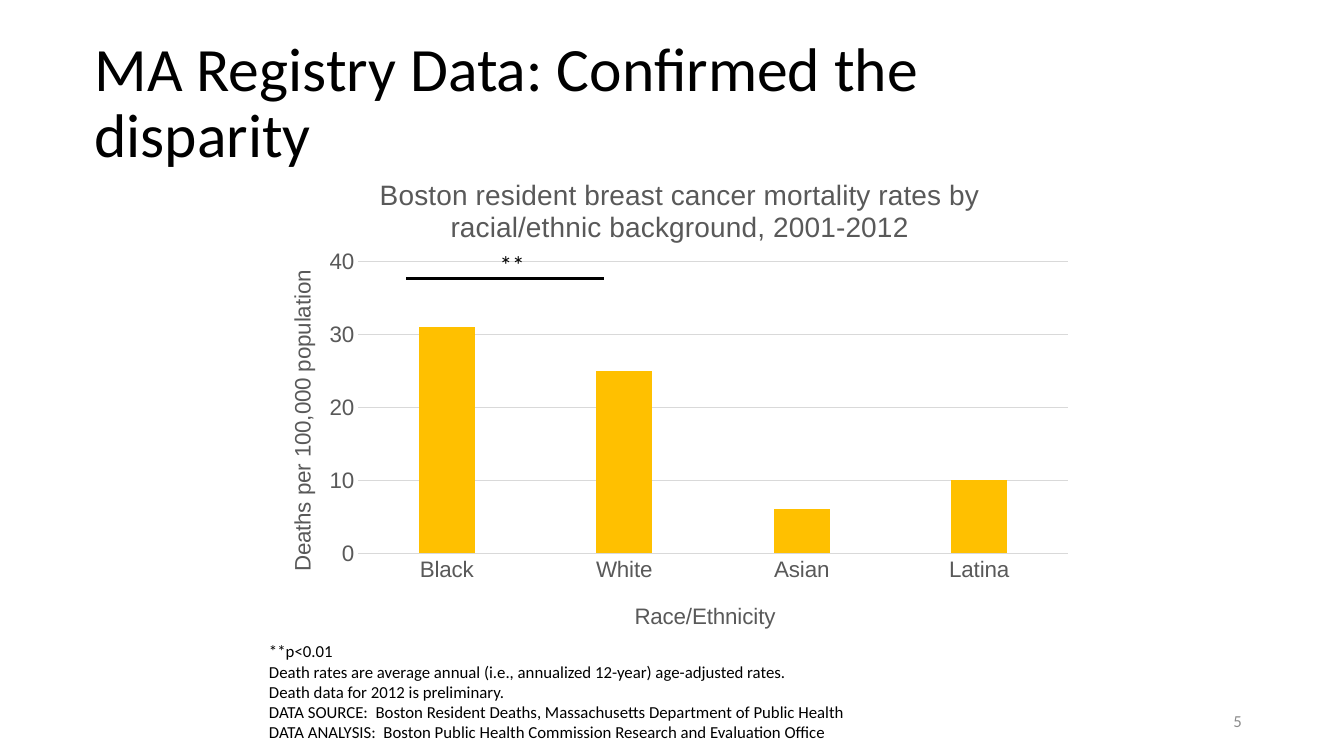
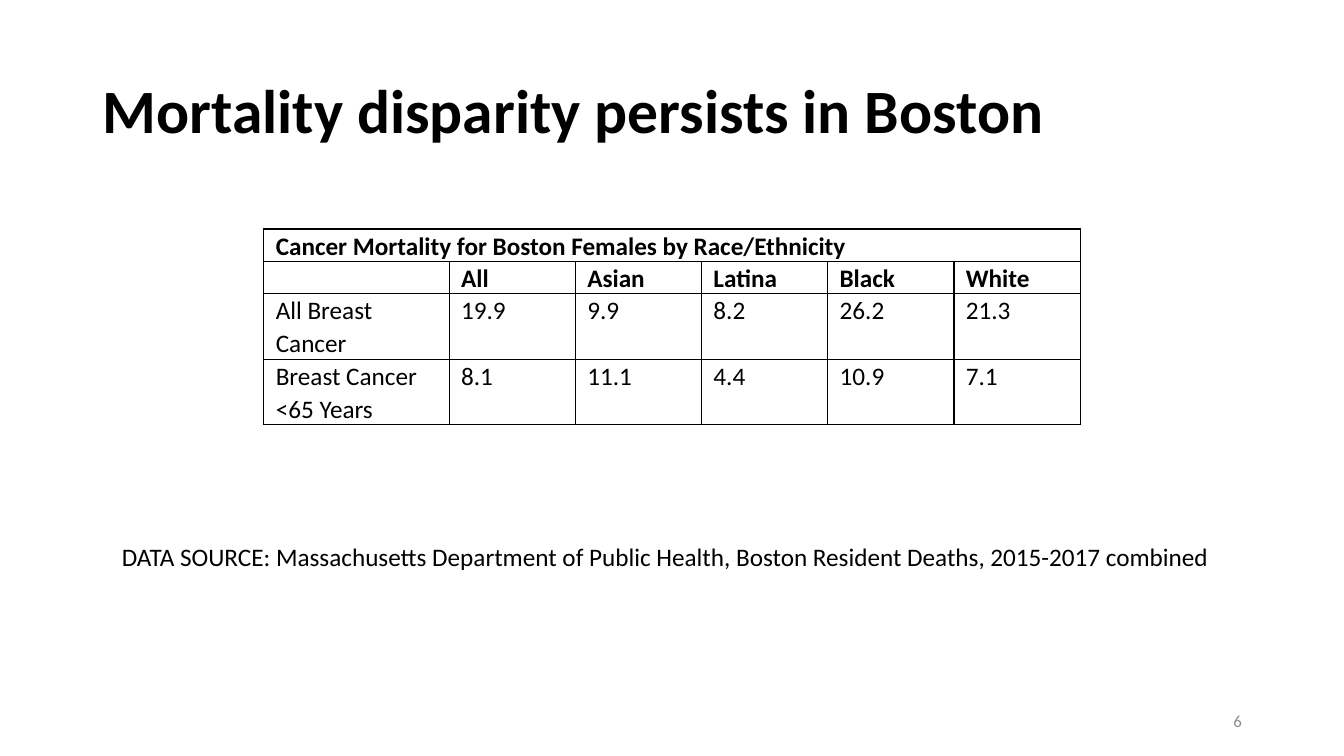
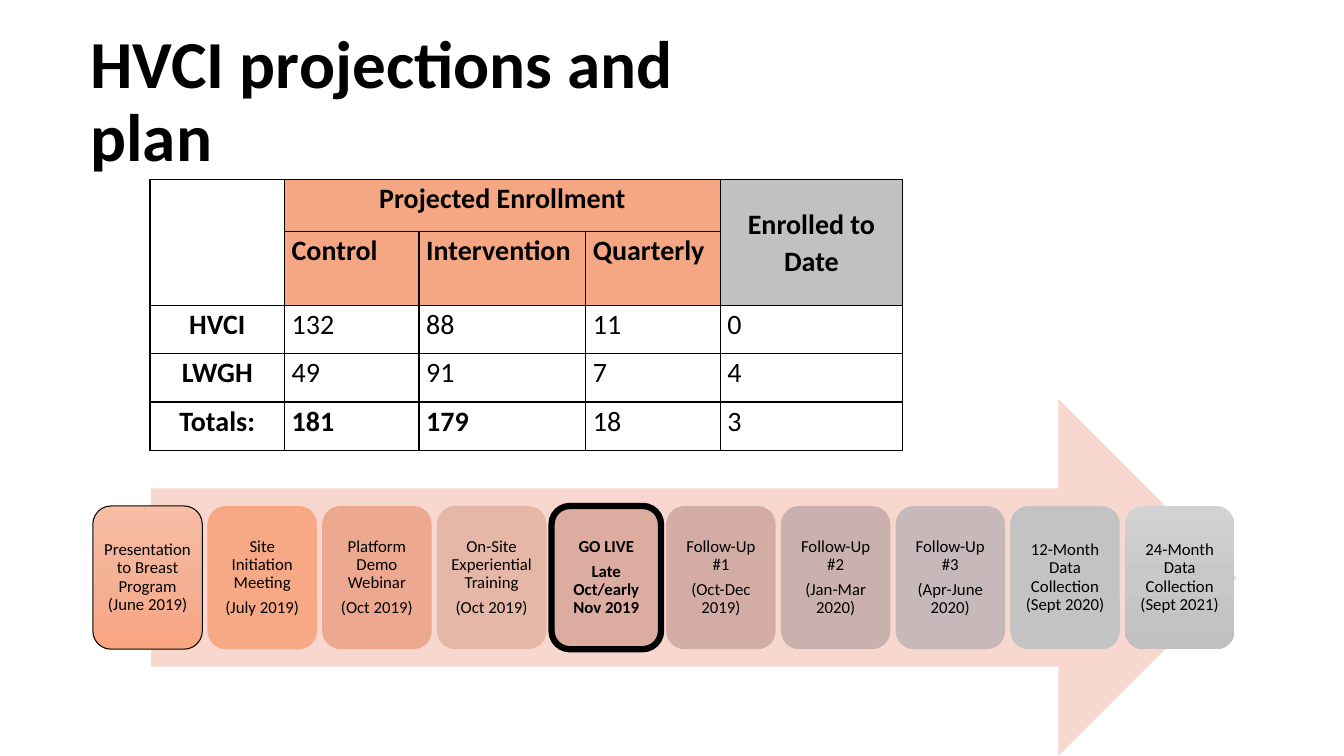
from copy import deepcopy

from pptx import Presentation
from pptx.chart.data import CategoryChartData
from pptx.dml.color import RGBColor
from pptx.enum.chart import XL_CHART_TYPE, XL_TICK_MARK
from pptx.enum.shapes import MSO_CONNECTOR, MSO_SHAPE
from pptx.enum.text import MSO_ANCHOR, PP_ALIGN
from pptx.oxml.ns import qn
from pptx.oxml.xmlchemy import OxmlElement
from pptx.util import Cm, Pt

COLUMNS = XL_CHART_TYPE.COLUMN_CLUSTERED
NO_TICK = XL_TICK_MARK.NONE
STRAIGHT = MSO_CONNECTOR.STRAIGHT
ROUND_RECT = MSO_SHAPE.ROUNDED_RECTANGLE
RIGHT_ARROW = MSO_SHAPE.RIGHT_ARROW
TOP, MIDDLE = MSO_ANCHOR.TOP, MSO_ANCHOR.MIDDLE
LEFT, CENTER, RIGHT = PP_ALIGN.LEFT, PP_ALIGN.CENTER, PP_ALIGN.RIGHT

FONT = "Calibri"
CHART_FONT = "Arial"
COLORS = {
    "text": "000000",
    "number": "8C8C8C",
    "chart_text": "595959",
    "grid": "D9D9D9",
    "bar": "FFC000",
    "arrow": "F8D7CE",
    "planned": "F5A783",
    "enrolled": "C1C1C1",
    "white": "FFFFFF",
}
STEPS = [
    (["Presentation to Breast Program (June 2019)"], ["F7BDA5", "F5B196", "F8A582"], 0.75),
    (["Site Initiation Meeting", "(July 2019)"], ["F7A885"], 0),
    (["Platform Demo Webinar", "(Oct 2019)"], ["EDA990"], 0),
    (["On-Site Experiential Training", "(Oct 2019)"], ["E5B7A7"], 0),
    (["GO LIVE", "Late Oct/early Nov 2019"], ["DCACA1"], 4.5),
    (["Follow-Up #1", "(Oct-Dec 2019)"], ["D3ADA5"], 0),
    (["Follow-Up #2", "(Jan-Mar 2020)"], ["CBB1AD"], 0),
    (["Follow-Up #3", "(Apr-June 2020)"], ["C7B9B9"], 0),
    (["12-Month Data Collection (Sept 2020)"], ["C3C3C3"], 0),
    (["24-Month Data Collection (Sept 2021)"], ["D2D2D2", "C8C8C8", "C0C0C0"], 0),
]


def rgb(color):
    return RGBColor.from_string(COLORS.get(color, color))


def cms(*lengths):
    return [Cm(v) for v in lengths]


def set_font(font, size, color="text", name=FONT, bold=False):
    font.size = Pt(size)
    font.name = name
    font.bold = bold
    font.color.rgb = rgb(color)


def write(tf, lines, size=18, color="text", bold=False, align=LEFT, spacing=1.0, after=0,
          name=FONT):
    for i, line in enumerate([lines] if isinstance(lines, str) else lines):
        p = tf.paragraphs[0] if i == 0 else tf.add_paragraph()
        p.alignment = align
        p.line_spacing = spacing
        p.space_after = Pt(after)
        set_font(p.font, size, color, name, bold)
        if line:
            r = p.add_run()
            r.text = line
            set_font(r.font, size, color, name, bold)


def add_text(s, box, lines, wrap=True, anchor=TOP, **fmt):
    tf = s.shapes.add_textbox(*cms(*box)).text_frame
    tf.word_wrap = wrap
    tf.vertical_anchor = anchor
    write(tf, lines, **fmt)


def add_title(s, box, text, size=44, bold=True):
    add_text(s, box, text, anchor=MIDDLE, size=size, bold=bold, spacing=0.9)


def add_number(s, number):
    add_text(s, (23.93, 17.65, 7.62, 1.02), str(number), anchor=MIDDLE, size=12,
             color="number", align=RIGHT)


def add_shape(s, kind, box, fills, line=0):
    sp = s.shapes.add_shape(kind, *cms(*box))
    sp.shadow.inherit = False
    if len(fills) == 1:
        sp.fill.solid()
        sp.fill.fore_color.rgb = rgb(fills[0])
    else:
        sp.fill.gradient()
        sp.fill.gradient_angle = 270
        stops = sp._element.spPr.find(".//" + qn("a:gsLst"))
        stops.insert(1, deepcopy(stops[0]))
        for i, (stop, color) in enumerate(zip(sp.fill.gradient_stops, fills)):
            stop.color.rgb = rgb(color)
            stop.position = i / 2
    if line:
        sp.line.color.rgb = rgb("text")
        sp.line.width = Pt(line)
    else:
        sp.line.fill.background()
    return sp


def add_rule(s, x1, x2, y, width):
    line = s.shapes.add_connector(STRAIGHT, *cms(x1, y, x2, y))
    line.line.color.rgb = rgb("text")
    line.line.width = Pt(width)
    line._element.spPr.append(OxmlElement("a:effectLst"))


def add_borders(cell):
    tc_pr = cell._tc.get_or_add_tcPr()
    for i, side in enumerate(("lnL", "lnR", "lnT", "lnB")):
        ln = OxmlElement("a:" + side)
        ln.set("w", str(Pt(1)))
        fill = OxmlElement("a:solidFill")
        color = OxmlElement("a:srgbClr")
        color.set("val", COLORS["text"])
        fill.append(color)
        ln.append(fill)
        tc_pr.insert(i, ln)


def add_table(s, left, top, cols, rows, data, merges, style, margin):
    box = cms(left, top, sum(cols), sum(rows))
    table = s.shapes.add_table(len(rows), len(cols), *box).table
    table.first_row = table.horz_banding = False
    for col, width in zip(table.columns, cols):
        col.width = Cm(width)
    for row, height in zip(table.rows, rows):
        row.height = Cm(height)
    for r, texts in enumerate(data):
        for c, text in enumerate(texts):
            cell = table.cell(r, c)
            fmt = style(r, c)
            fill = fmt.pop("fill", None)
            cell.vertical_anchor = fmt.pop("anchor", TOP)
            cell.margin_left = cell.margin_right = Cm(margin)
            cell.margin_top = cell.margin_bottom = 0
            add_borders(cell)
            if fill:
                cell.fill.solid()
                cell.fill.fore_color.rgb = rgb(fill)
            else:
                cell.fill.background()
            write(cell.text_frame, text, spacing=1.07, **fmt)
    for first, last in merges:
        table.cell(*first).merge(table.cell(*last))


def place(parent, index, **values):
    old = parent.find(qn("c:layout"))
    if old is not None:
        parent.remove(old)
    layout = OxmlElement("c:layout")
    manual = OxmlElement("c:manualLayout")
    layout.append(manual)
    for tag, val in values.items():
        el = OxmlElement("c:" + tag)
        el.set("val", str(val))
        manual.append(el)
    parent.insert(index, layout)


def chart_title(title, text, size, x, y):
    write(title.text_frame, text, size=size, color="chart_text", align=CENTER,
          name=CHART_FONT)
    place(title._element, 1, xMode="edge", yMode="edge", x=x, y=y)


def add_mortality_chart(s, box):
    data = CategoryChartData()
    data.categories = ["Black", "White", "Asian", "Latina"]
    data.add_series("Series 1", (31, 25, 6, 10))
    chart = s.shapes.add_chart(COLUMNS, *cms(*box), data).chart
    chart.has_legend = False
    chart.has_title = True
    set_font(chart.font, 16, "chart_text", CHART_FONT)
    chart_title(chart.chart_title,
                "Boston resident breast cancer mortality rates by racial/ethnic "
                "background, 2001-2012", 20, 0.14, 0.04)
    plot = chart.plots[0]
    plot.gap_width = 219
    plot.overlap = -27
    plot.vary_by_categories = False
    bars = plot.series[0].format.fill
    bars.solid()
    bars.fore_color.rgb = rgb("bar")

    cat, val = chart.category_axis, chart.value_axis
    for axis in (cat, val):
        axis.major_tick_mark = axis.minor_tick_mark = NO_TICK
        set_font(axis.tick_labels.font, 16, "chart_text", CHART_FONT)
    chart_title(cat.axis_title, "Race/Ethnicity", 16, 0.45, 0.9)
    chart_title(val.axis_title, "Deaths per 100,000 population", 16, 0.03, 0.23)
    val.axis_title.text_frame._txBody.bodyPr.set("rot", "-5400000")
    val.minimum_scale, val.maximum_scale, val.major_unit = 0, 40, 10
    val.format.line.fill.background()
    for line in (cat.format.line, val.major_gridlines.format.line):
        line.color.rgb = rgb("grid")
        line.width = Pt(0.75)
    place(chart._chartSpace.chart.plotArea, 0, layoutTarget="inner", xMode="edge",
          yMode="edge", x=0.12, y=0.22, w=0.86, h=0.59)


def registry_slide(s):
    add_title(s, (2.13, 0.79, 26.82, 3.68), "MA Registry Data: Confirmed the disparity",
              bold=False)
    add_text(s, (6.53, 16.03, 20.8, 2.82), [
        "**p<0.01",
        "Death rates are average annual (i.e., annualized 12-year) age-adjusted rates.",
        "Death data for 2012 is preliminary.",
        "DATA SOURCE:  Boston Resident Deaths, Massachusetts Department of Public Health",
        "DATA ANALYSIS:  Boston Public Health Commission Research and Evaluation Office",
    ], size=12)
    add_number(s, 5)
    add_mortality_chart(s, (6.53, 3.84, 20.8, 12.47))
    add_rule(s, 10.24, 15.21, 7.01, 2.25)
    add_text(s, (12.34, 6.17, 1.14, 1.02), "**", wrap=False)


def disparity_slide(s):
    add_title(s, (2.34, 1.02, 29.21, 3.68), "Mortality disparity persists in Boston")
    add_number(s, 6)
    data = [
        ["Cancer Mortality for Boston Females by Race/Ethnicity", "", "", "", "", ""],
        ["", "All", "Asian", "Latina", "Black", "White"],
        ["All Breast Cancer", "19.9", "9.9", "8.2", "26.2", "21.3"],
        ["Breast Cancer <65 Years", "8.1", "11.1", "4.4", "10.9", "7.1"],
    ]
    add_table(s, 6.65, 5.77, [4.67] + [3.18] * 5, [0.8, 0.8, 1.65, 1.65], data,
              [((0, 0), (0, 5))], lambda r, c: {"bold": r < 2}, 0.3)
    add_text(s, (2.82, 13.51, 28.22, 1.8),
             "DATA SOURCE: Massachusetts Department of Public Health, "
             "Boston Resident Deaths, 2015-2017 combined", wrap=False)


def enrollment_style(r, c):
    header = r < 2
    fmt = {"size": 20, "after": 8,
           "bold": header or c == 0 or (r == 4 and c < 3),
           "align": CENTER if c == 0 or r == 0 else LEFT}
    if header:
        fmt["fill"] = "white" if c == 0 else "enrolled" if c == 4 else "planned"
        fmt["anchor"] = MIDDLE if c == 4 else TOP
    return fmt


def add_timeline(s):
    add_shape(s, RIGHT_ARROW, (3.81, 10.06, 27.36, 8.99), ["arrow"])
    for i, (lines, fills, line) in enumerate(STEPS):
        sp = add_shape(s, ROUND_RECT, (2.34 + 2.89 * i, 12.75, 2.76, 3.61), fills, line)
        tf = sp.text_frame
        tf.word_wrap = True
        tf.vertical_anchor = MIDDLE
        tf.margin_left = tf.margin_right = tf.margin_top = tf.margin_bottom = Cm(0.13)
        write(tf, lines, size=12, bold=lines[0] == "GO LIVE", align=CENTER, spacing=0.9,
              after=4.5)


def projections_slide(s):
    add_timeline(s)
    data = [
        ["", "Projected Enrollment", "", "", "Enrolled to Date"],
        ["", "Control", "Intervention", "Quarterly", ""],
        ["HVCI", "132", "88", "11", "0"],
        ["LWGH", "49", "91", "7", "4"],
        ["Totals:", "181", "179", "18", "3"],
    ]
    merges = [((0, 0), (1, 0)), ((0, 1), (0, 3)), ((0, 4), (1, 4))]
    add_table(s, 3.78, 4.52, [3.39, 3.39, 4.2, 3.39, 4.6], [1.32] * 2 + [1.22] * 3, data,
              merges, enrollment_style, 0.18)
    add_title(s, (2.03, 0.76, 17.65, 3.68), "HVCI projections and plan", size=48)


def main():
    prs = Presentation()
    prs.slide_width, prs.slide_height = cms(33.87, 19.05)
    for build in (registry_slide, disparity_slide, projections_slide):
        build(prs.slides.add_slide(prs.slide_layouts[6]))
    prs.save("out.pptx")


if __name__ == "__main__":
    main()
